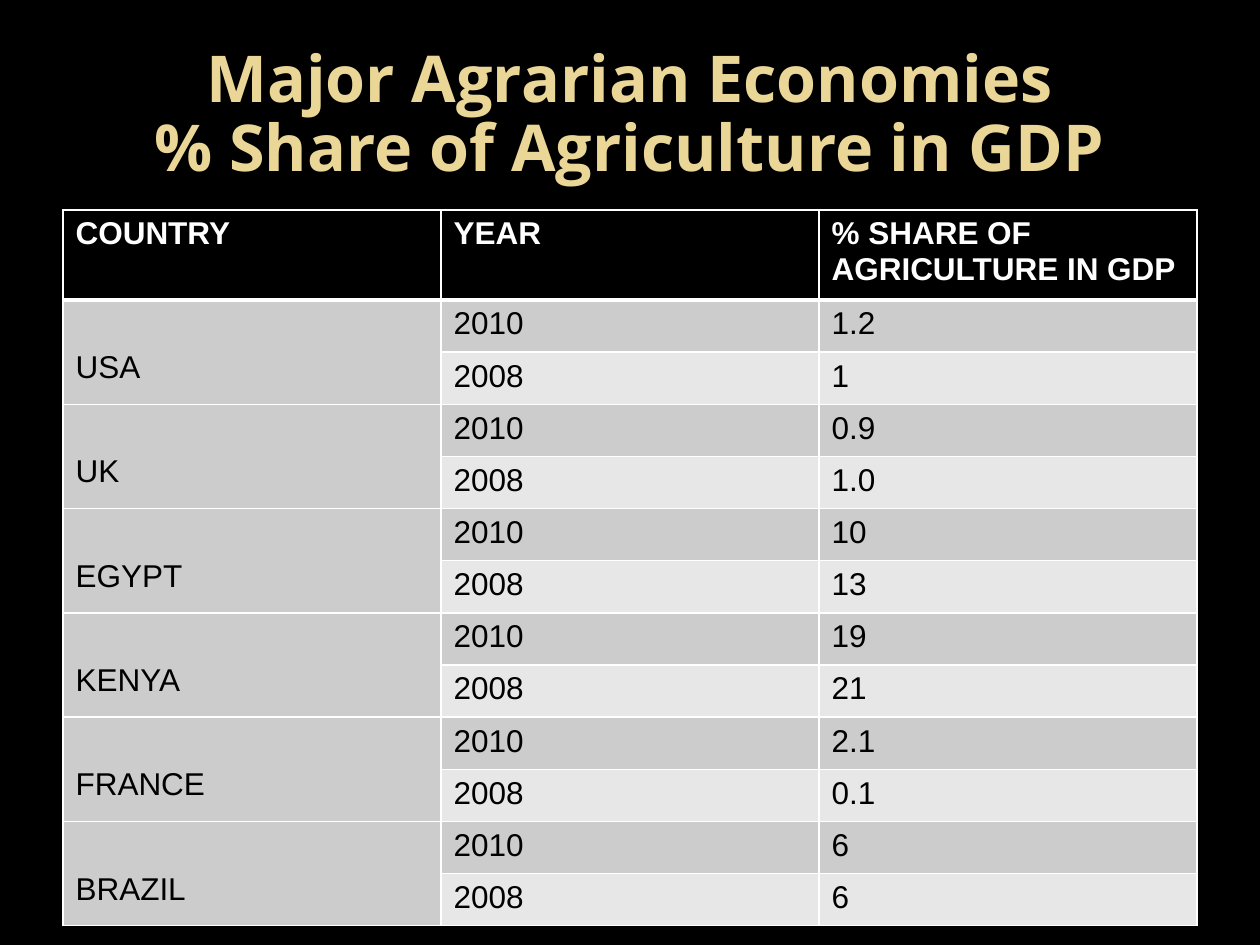
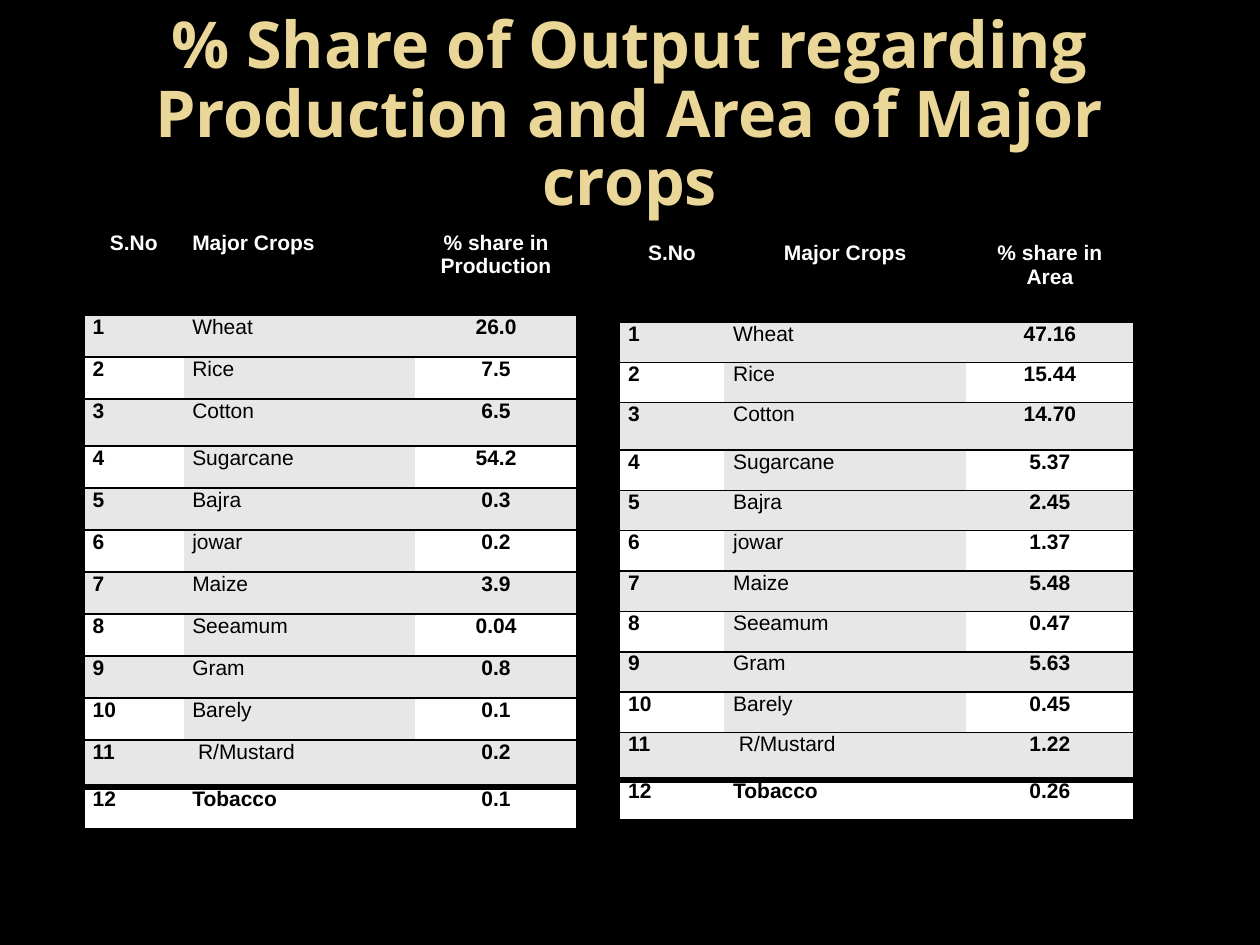
from lxml import etree
from pptx import Presentation
from pptx.dml.color import RGBColor
from pptx.enum.text import MSO_ANCHOR, PP_ALIGN
from pptx.oxml.ns import qn
from pptx.util import Pt

LEFT, CENTER = PP_ALIGN.LEFT, PP_ALIGN.CENTER
MIDDLE = MSO_ANCHOR.MIDDLE

COLORS = {
    "black": "000000",
    "white": "FFFFFF",
    "gold": "EAD696",
    "grey": "CCCCCC",
    "pale": "E7E7E7",
}


def write_text(frame, text, size=18, color="black", bold=False, align=LEFT,
               font="Arial", spacing=None):
    frame.word_wrap = True
    paragraph = frame.paragraphs[0]
    paragraph.text = text
    paragraph.alignment = align
    paragraph.line_spacing = spacing
    for run in paragraph.runs:
        run.font.name = font
        run.font.size = Pt(size)
        run.font.bold = bold
        run.font.color.rgb = RGBColor.from_string(COLORS[color])


def style_cell(cell, fill, line, left=1, right=1, top=1, bottom=1):
    """Fill a cell and draw its borders; a border of width 0 is left out."""
    properties = cell._tc.get_or_add_tcPr()
    for side, width in zip("LRTB", (left, right, top, bottom)):
        border = etree.SubElement(properties, qn(f"a:ln{side}"), w=str(Pt(width)))
        if width:
            paint = etree.SubElement(border, qn("a:solidFill"))
            etree.SubElement(paint, qn("a:srgbClr"), val=COLORS[line])
        else:
            etree.SubElement(border, qn("a:noFill"))
    cell.fill.solid()
    cell.fill.fore_color.rgb = RGBColor.from_string(COLORS[fill])


presentation = Presentation()
presentation.slide_width, presentation.slide_height = Pt(720), Pt(540)

# Black slides with a gold title
titles = [
    "Major Agrarian Economies\v% Share of Agriculture in GDP",
    "% Share of Output regarding Production and Area of Major crops",
]
slides = []
for title in titles:
    slide = presentation.slides.add_slide(presentation.slide_layouts[6])
    slide.background.fill.solid()
    slide.background.fill.fore_color.rgb = RGBColor.from_string(COLORS["black"])
    heading = slide.shapes.add_textbox(Pt(36), Pt(21.6), Pt(648), Pt(90)).text_frame
    heading.vertical_anchor = MIDDLE
    write_text(heading, title, size=36.9, color="gold", bold=True, align=CENTER,
               font="Open Sans", spacing=0.88)
    slides.append(slide)
economies_slide, crops_slide = slides

# Share of agriculture in GDP: two years per country
gdp_shares = {
    "USA": ("1.2", "1"),
    "UK": ("0.9", "1.0"),
    "EGYPT": ("10", "13"),
    "KENYA": ("19", "21"),
    "FRANCE": ("2.1", "0.1"),
    "BRAZIL": ("6", "6"),
}
gdp_rows = [("COUNTRY", "YEAR", "% SHARE OF AGRICULTURE IN GDP")]
for country, (share_2010, share_2008) in gdp_shares.items():
    gdp_rows += [(country, "2010", share_2010), ("", "2008", share_2008)]

gdp_table = economies_slide.shapes.add_table(
    len(gdp_rows), 3, Pt(36), Pt(120), Pt(648), Pt(409)).table
gdp_table.first_row = gdp_table.horz_banding = False
for r, values in enumerate(gdp_rows):
    header = r == 0
    gdp_table.rows[r].height = Pt(51.5 if header else 29.8)
    for c, value in enumerate(values):
        cell = gdp_table.cell(r, c)
        fill = "black" if header else "grey" if r % 2 or c == 0 else "pale"
        style_cell(cell, fill, "white", top=3 if r == 1 else 1, bottom=3 if header else 1)
        if value:
            write_text(cell.text_frame, value, bold=header,
                       color="white" if header else "black")
for r in range(1, len(gdp_rows), 2):
    country_cell = gdp_table.cell(r, 0)
    country_cell.merge(gdp_table.cell(r + 1, 0))
    country_cell.margin_top = Pt(28.6)

# Crop shares: production on the left, area on the right
crops = ["Wheat", "Rice", "Cotton", "Sugarcane", "Bajra", "jowar", "Maize",
         "Seeamum", "Gram", "Barely", " R/Mustard", "Tobacco"]
crop_tables = [
    dict(measure="% share in Production", left=48, top=132, widths=(56.9, 132.5, 92.2),
         header_height=48, row_height=24, crops_align=LEFT,
         shares=["26.0", "7.5", "6.5", "54.2", "0.3", "0.2", "3.9", "0.04",
                 "0.8", "0.1", "0.2", "0.1"]),
    dict(measure="% share in Area", left=354, top=138, widths=(60, 138, 96),
         header_height=46, row_height=23.1, crops_align=CENTER,
         shares=["47.16", "15.44", "14.70", "5.37", "2.45", "1.37", "5.48", "0.47",
                 "5.63", "0.45", "1.22", "0.26"]),
]
TALL_ROWS = (3, 11)
LAST_ROW = len(crops)
for spec_table in crop_tables:
    crop_rows = [("S.No", "Major Crops", spec_table["measure"])]
    for number, (crop, share) in enumerate(zip(crops, spec_table["shares"]), start=1):
        crop_rows.append((str(number), crop, share))
    heights = [spec_table["header_height"]] + [
        27 if r in TALL_ROWS else spec_table["row_height"] for r in range(1, LAST_ROW + 1)]

    crop_table = crops_slide.shapes.add_table(
        len(crop_rows), 3, Pt(spec_table["left"]), Pt(spec_table["top"]),
        Pt(sum(spec_table["widths"])), Pt(sum(heights))).table
    crop_table.first_row = crop_table.horz_banding = False
    for c, width in enumerate(spec_table["widths"]):
        crop_table.columns[c].width = Pt(width)

    for r, values in enumerate(crop_rows):
        header, last = r == 0, r == LAST_ROW
        crop_table.rows[r].height = Pt(heights[r])
        header_aligns = (CENTER, spec_table["crops_align"], CENTER)
        aligns = header_aligns if header else (LEFT, LEFT, CENTER)
        for c, value in enumerate(values):
            cell = crop_table.cell(r, c)
            cell.margin_left = cell.margin_right = Pt(5)
            cell.margin_top = cell.margin_bottom = 0
            shaded = r % 2 or (c == 1 and not last)
            fill = "black" if header else "pale" if shaded else "white"
            style_cell(cell, fill, "black", left=int(c == 0), right=int(c == 2),
                       top=4 if last else 1, bottom=4 if r == LAST_ROW - 1 else 1)
            write_text(cell.text_frame, value, size=12, align=aligns[c],
                       color="white" if header else "black",
                       bold=header or last or c != 1)

presentation.save("out.pptx")
